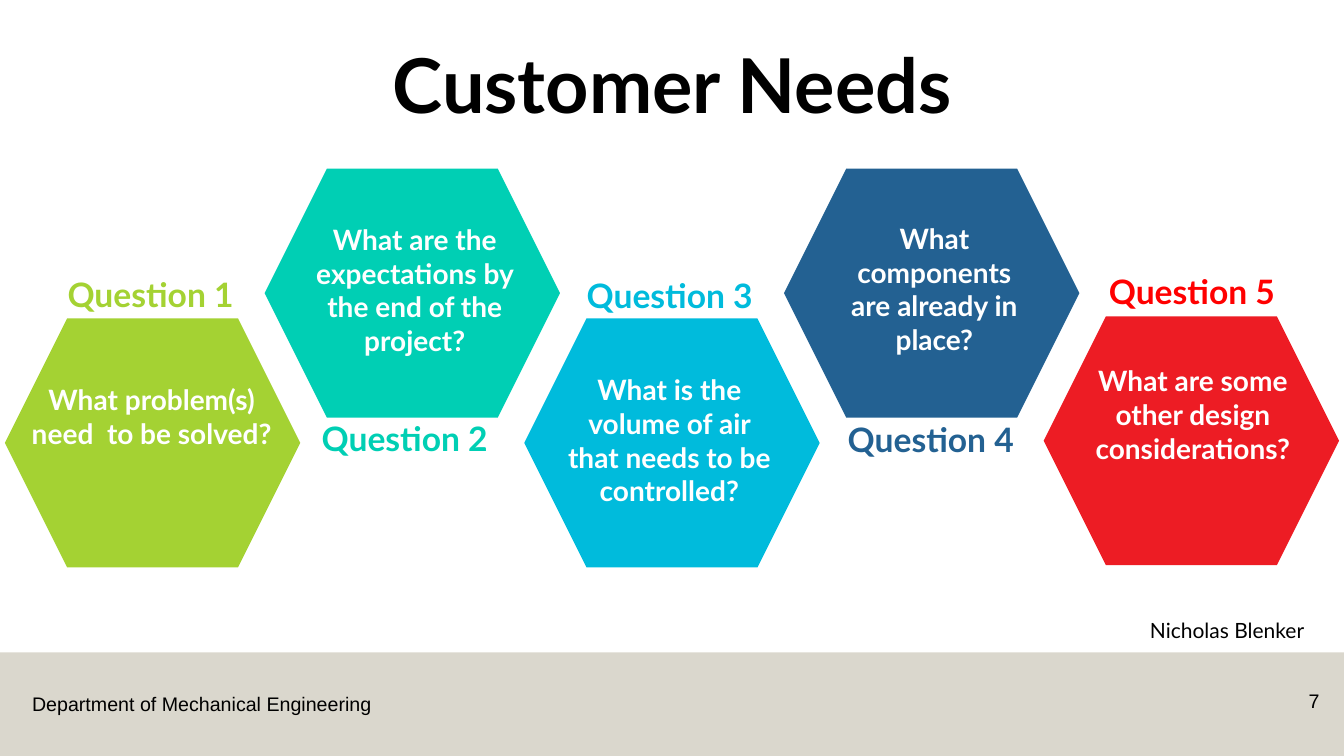
import pptx
import pptx.util
import pptx.dml.color
import pptx.enum.shapes
import pptx.enum.text
import pptx.oxml
import pptx.oxml.ns

Pt = pptx.util.Pt
RGB = pptx.dml.color.RGBColor
ALIGN = pptx.enum.text.PP_ALIGN
ANCHOR = pptx.enum.text.MSO_ANCHOR
KINDS = pptx.enum.shapes.MSO_SHAPE

BLACK = RGB(0x00, 0x00, 0x00)
WHITE = RGB(0xFF, 0xFF, 0xFF)
SAND = RGB(0xB7, 0xB0, 0x9C)
LIME = RGB(0xA4, 0xD2, 0x33)
TEAL = RGB(0x00, 0xCF, 0xB4)
CYAN = RGB(0x00, 0xBB, 0xDC)
NAVY = RGB(0x23, 0x61, 0x92)
CRIMSON = RGB(0xED, 0x1C, 0x24)
RED = RGB(0xFF, 0x00, 0x00)

TITLE = "Customer Needs"
# question, hexagon colour, label colour, hexagon top, label (left, top),
# question box (left, top, width, height)
ASKS = [
    ("What problem(s) need  to be solved?", LIME, LIME, 227.5,
     (7.6, 192.2), (15.1, 270, 186.5, 104.4)),
    ("What are the expectations by the end of the project?", TEAL, TEAL, 120.5,
     (189.1, 295.2), (216.7, 155.5, 159.1, 128.2)),
    ("What is the volume of air that needs to be controlled?", CYAN, CYAN, 227.5,
     (378.4, 193), (396, 262.8, 164.2, 128.2)),
    ("What components are already in place?", NAVY, NAVY, 120.5,
     (564.9, 296), (589.7, 154.8, 155.5, 128.2)),
    ("What are some other design considerations?", CRIMSON, RED, 226,
     (751.4, 190), (764.6, 256.3, 175, 128.2)),
]
# text, place, alignment, font
NOTES = [
    ("Department of Mechanical Engineering", (15.8, 491, 270, 24.5), ALIGN.LEFT,
     dict(name="Arial", size=Pt(14))),
    ("7", (894.2, 488.9, 55.4, 28.8), ALIGN.RIGHT,
     dict(name="Arial", size=Pt(14))),
    ("Nicholas Blenker", (814.3, 437.8, 140, 25.2), ALIGN.LEFT,
     dict(name="Lato", size=Pt(15))),
]
WIDE, HIGH = 960, 540
HEX_X, STEP, HEX_W, HEX_H = 3.5, 185.5, 211, 177.8
LABEL_W, LABEL_H = 200, 36
BAND_Y = 466


def write(frame, text, align, look):
    frame.word_wrap = True
    frame.text = text
    para = frame.paragraphs[0]
    para.alignment = align
    look = dict(look)
    para.font.color.rgb = look.pop("color", BLACK)
    for key, value in look.items():
        setattr(para.font, key, value)
    return para


def label(slide, text, place, align, look):
    box = slide.shapes.add_textbox(*map(Pt, place))
    write(box.text_frame, text, align, look)


def block(slide, kind, place, color):
    shape = slide.shapes.add_shape(kind, *map(Pt, place))
    shape.shadow.inherit = False
    shape.fill.solid()
    shape.fill.fore_color.rgb = color
    shape.line.fill.background()
    return shape


def fade(shape, share):
    """Set the opacity of a solid fill, in percent."""
    tint = shape.fill._xPr.find(".//" + pptx.oxml.ns.qn("a:srgbClr"))
    alpha = pptx.oxml.parse_xml(
        '<a:alpha %s val="%d"/>' % (pptx.oxml.ns.nsdecls("a"), share * 1000))
    tint.append(alpha)


def main():
    deck = pptx.Presentation()
    deck.slide_width, deck.slide_height = Pt(WIDE), Pt(HIGH)
    slide = deck.slides.add_slide(deck.slide_layouts[5])

    band = block(slide, KINDS.RECTANGLE, (0, BAND_Y, WIDE, HIGH - BAND_Y), SAND)
    fade(band, 50)

    for i, (ask, fill, ink, top, spot, place) in enumerate(ASKS):
        block(slide, KINDS.HEXAGON, (HEX_X + i * STEP, top, HEX_W, HEX_H), fill)
        label(slide, f"Question {i + 1}", (*spot, LABEL_W, LABEL_H), ALIGN.CENTER,
              dict(name="Lato", size=Pt(24), bold=True, color=ink))
        label(slide, ask, place, ALIGN.CENTER,
              dict(name="Lato", size=Pt(20), bold=True, color=WHITE))

    title = slide.shapes.title
    title.left, title.top, title.width, title.height = map(Pt, (110.9, 0, 738.7, 96.5))
    frame = title.text_frame
    frame.auto_size = pptx.enum.text.MSO_AUTO_SIZE.NONE
    frame.vertical_anchor = ANCHOR.BOTTOM
    para = write(frame, TITLE, ALIGN.CENTER,
                 dict(name="Lato", size=Pt(54), bold=True))
    para.line_spacing = 0.9

    for note in NOTES:
        label(slide, *note)

    deck.save("out.pptx")


if __name__ == "__main__":
    main()
